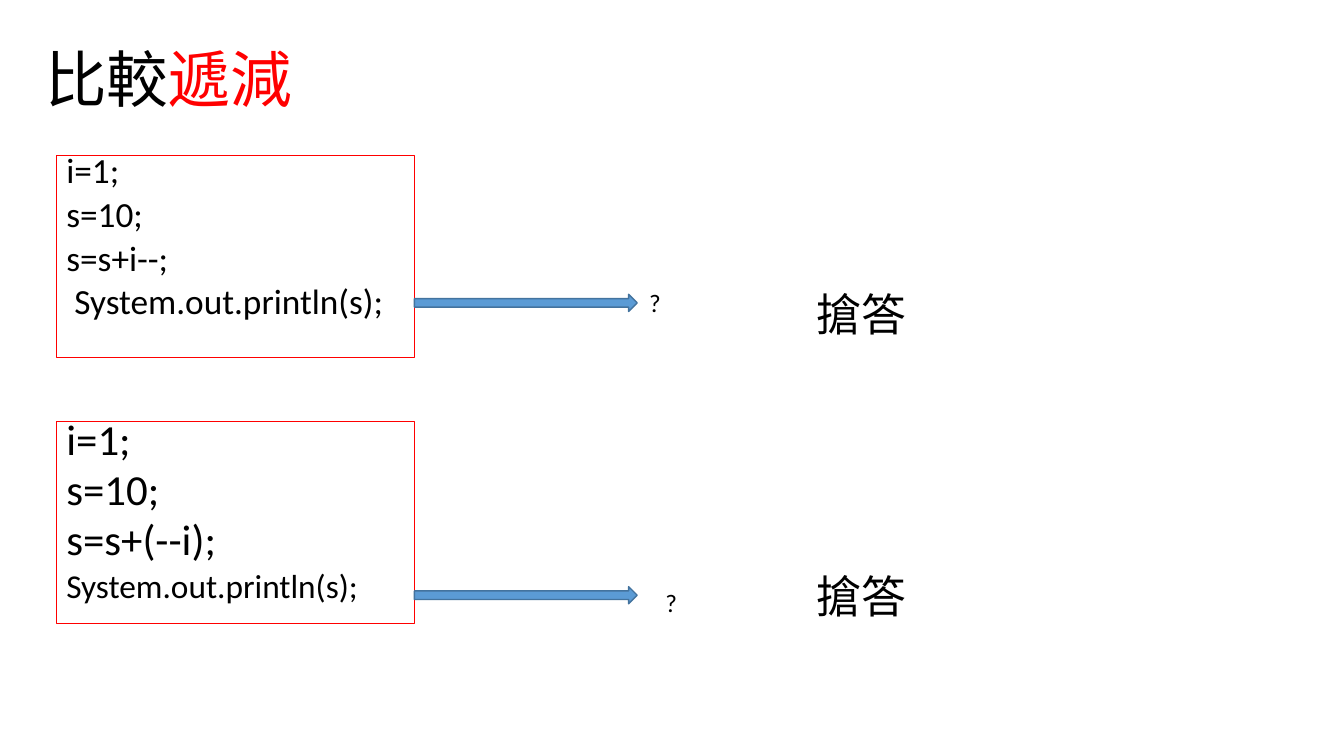
from pptx import Presentation
from pptx.dml.color import RGBColor
from pptx.enum.shapes import MSO_SHAPE as SHAPE
from pptx.enum.text import MSO_ANCHOR as ANCHOR, PP_ALIGN as ALIGN
from pptx.util import Inches, Pt

COLORS = {"text": "000000", "accent": "FF0000", "arrow": "5B9BD5", "edge": "43739E"}
FONT = "Calibri"
PANEL_W, PANEL_H = 3.55, 2.01
ARROW_W, ARROW_H = 2.21, 0.17
QUIZ_X = 7.44


def rgb(name):
    return RGBColor.from_string(COLORS[name])


def set_font(font, size, color="text"):
    font.name, font.size, font.color.rgb = FONT, Pt(size), rgb(color)


def add_shape(s, kind, x, y, w, h, line, weight, fill=None):
    sp = s.shapes.add_shape(kind, *map(Inches, (x, y, w, h)))
    sp.shadow.inherit = False
    if fill:
        sp.fill.solid()
        sp.fill.fore_color.rgb = rgb(fill)
    else:
        sp.fill.background()
    sp.line.color.rgb = rgb(line)
    sp.line.width = Pt(weight)
    return sp


def add_label(s, text, x, y, w, h, size):
    tf = s.shapes.add_textbox(*map(Inches, (x, y, w, h))).text_frame
    tf.word_wrap = False
    p = tf.paragraphs[0]
    p.text = text
    set_font(p.font, size)


def add_title(s, x, y, w, h, parts):
    tf = s.shapes.add_textbox(*map(Inches, (x, y, w, h))).text_frame
    tf.word_wrap = True
    tf.vertical_anchor = ANCHOR.MIDDLE
    p = tf.paragraphs[0]
    p.line_spacing = 0.9
    for text, color in parts:
        r = p.add_run()
        r.text = text
        set_font(r.font, 44, color)


def add_exercise(s, x, y, code, arrow_y, mark, quiz_y):
    sp = add_shape(s, SHAPE.RECTANGLE, x, y, PANEL_W, PANEL_H, "accent", 0.75)
    tf = sp.text_frame
    tf.word_wrap = True
    tf.vertical_anchor = ANCHOR.TOP
    for i, (text, size) in enumerate(code):
        p = tf.add_paragraph() if i else tf.paragraphs[0]
        p.text = text
        p.alignment = ALIGN.LEFT
        p.line_spacing = 0.7
        p.space_before = Pt(10)
        set_font(p.font, size)
    add_shape(s, SHAPE.RIGHT_ARROW, x + PANEL_W, y + arrow_y, ARROW_W, ARROW_H,
              "edge", 1, "arrow")
    mark_x, mark_y = mark
    add_label(s, "?", x + mark_x, y + mark_y, 0.32, 0.4, 18)
    add_label(s, "搶答", x + QUIZ_X, y + quiz_y, 1.1, 0.64, 32)


def main():
    prs = Presentation()
    prs.slide_width, prs.slide_height = Inches(13.33), Inches(7.5)
    s = prs.slides.add_slide(prs.slide_layouts[6])
    add_title(s, 0.35, 0.09, 11.5, 1.45, [("比較", "text"), ("遞減", "accent")])
    postfix = [(t, 25.2) for t in ("i=1;", "s=10;", "s=s+i--;", " System.out.println(s);")]
    prefix = [(t, 30.6) for t in ("i=1;", "s=10;", "s=s+(--i);")]
    prefix.append(("System.out.println(s);", 23.8))
    add_exercise(s, 0.56, 1.54, postfix, 1.38, (5.78, 1.26), 1.26)
    add_exercise(s, 0.56, 4.18, prefix, 1.64, (5.94, 1.6), 1.41)
    prs.save("out.pptx")


if __name__ == "__main__":
    main()
